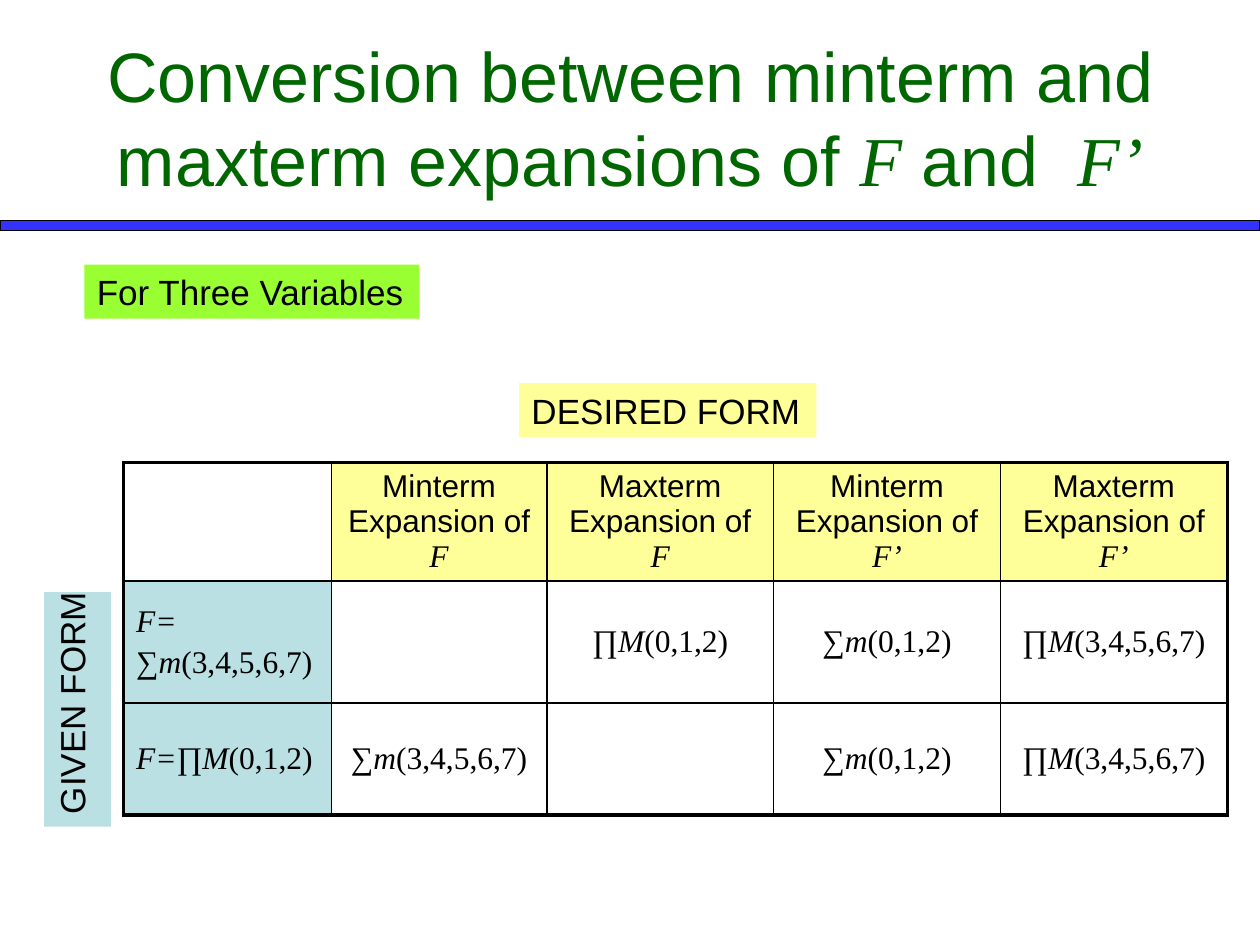
from typing import NamedTuple

from lxml.etree import SubElement
from pptx import Presentation
from pptx.dml.color import RGBColor
from pptx.enum.shapes import MSO_SHAPE
from pptx.enum.text import MSO_ANCHOR, MSO_AUTO_SIZE, PP_ALIGN
from pptx.oxml.ns import qn
from pptx.util import Inches, Pt

SANS, SERIF = "Arial", "Times New Roman"
BLACK, GREEN, BLUE = "000000", "006600", "3333FF"
YELLOW, TEAL, LIME = "FFFF99", "BBE0E3", "99FF33"
COLUMN_WIDTHS = (1.65, 1.71, 1.8, 1.8, 1.8)
ROW_HEIGHTS = (0.94, 0.97, 0.89)


class TextRun(NamedTuple):
    text: str
    font: str = SERIF
    italic: bool = False


class Label(NamedTuple):
    text: str
    left: float
    top: float
    width: float
    height: float
    fill: str
    upward: bool = False


LABELS = (
    Label("GIVEN FORM", 0.35, 4.7, 0.53, 1.86, TEAL, upward=True),
    Label("DESIRED FORM", 4.12, 3.04, 2.36, 0.43, YELLOW),
    Label("For Three Variables", 0.67, 2.1, 2.66, 0.43, LIME),
)


def color(hex_value: str) -> RGBColor:
    return RGBColor.from_string(hex_value)


def variable(name: str) -> TextRun:
    return TextRun(name, italic=True)


def heading(kind: str, function: str) -> list:
    return [[TextRun(f"{kind} Expansion of ", SANS), variable(function)]]


def expansion(operator: str, letter: str, indices: str) -> list:
    return [TextRun(operator), variable(letter), TextRun(f"({indices})")]


MINTERMS_F = expansion("∑", "m", "3,4,5,6,7")
MAXTERMS_F = expansion("∏", "M", "0,1,2")
MINTERMS_NOT_F = expansion("∑", "m", "0,1,2")
MAXTERMS_NOT_F = expansion("∏", "M", "3,4,5,6,7")

# Each cell is a list of paragraphs, each paragraph a list of runs.
TABLE_ROWS = (
    ([], heading("Minterm", "F"), heading("Maxterm", "F"),
     heading("Minterm", "F’"), heading("Maxterm", "F’")),
    ([[variable("F=")], MINTERMS_F], [], [MAXTERMS_F],
     [MINTERMS_NOT_F], [MAXTERMS_NOT_F]),
    ([[variable("F="), *MAXTERMS_F]], [MINTERMS_F], [],
     [MINTERMS_NOT_F], [MAXTERMS_NOT_F]),
)


def add_runs(paragraph, runs, size: float, text_color: str = BLACK) -> None:
    for text, font, italic in runs:
        run = paragraph.add_run()
        run.text = text
        formats = {"name": font, "size": Pt(size), "italic": italic}
        for attribute, value in formats.items():
            setattr(run.font, attribute, value)
        run.font.color.rgb = color(text_color)


def add_rectangle(slide, left: float, top: float, width: float, height: float, fill: str):
    shape = slide.shapes.add_shape(
        MSO_SHAPE.RECTANGLE, Inches(left), Inches(top), Inches(width), Inches(height))
    shape.shadow.inherit = False
    shape.fill.solid()
    shape.fill.fore_color.rgb = color(fill)
    shape.line.fill.background()
    return shape


def add_title(slide) -> None:
    title = slide.shapes.title
    box = {"left": 0.5, "top": 0.3, "width": 9, "height": 1.25}
    for attribute, value in box.items():
        setattr(title, attribute, Inches(value))
    frame = title.text_frame
    frame.auto_size = MSO_AUTO_SIZE.NONE
    frame.vertical_anchor = MSO_ANCHOR.MIDDLE
    paragraph = frame.paragraphs[0]
    paragraph.alignment = PP_ALIGN.CENTER
    runs = (TextRun("Conversion between minterm and maxterm expansions of ", SANS),
            variable("F"), TextRun(" and  ", SANS), variable("F’"))
    add_runs(paragraph, runs, 40, GREEN)


def add_rule(slide) -> None:
    rule = add_rectangle(slide, 0, 1.75, 10, 0.08, BLUE)
    rule.line.color.rgb = color(BLACK)
    rule.line.width = Pt(0.75)


def add_label(slide, label: Label) -> None:
    shape = add_rectangle(slide, *label[1:6])
    frame = shape.text_frame
    formats = {"word_wrap": False, "auto_size": MSO_AUTO_SIZE.SHAPE_TO_FIT_TEXT,
               "vertical_anchor": MSO_ANCHOR.TOP}
    for attribute, value in formats.items():
        setattr(frame, attribute, value)
    if label.upward:
        shape.rotation = 180
        frame._txBody.bodyPr.set("vert", "eaVert")
    paragraph = frame.paragraphs[0]
    paragraph.alignment = PP_ALIGN.LEFT
    add_runs(paragraph, [TextRun(label.text, SANS)], 20)


def add_borders(cell, row: int, column: int) -> None:
    """Draw thick lines on the outer edge of the table and thin ones inside."""
    outer_edges = {"a:lnL": column == 0, "a:lnR": column == len(COLUMN_WIDTHS) - 1,
                   "a:lnT": row == 0, "a:lnB": row == len(ROW_HEIGHTS) - 1}
    properties = cell._tc.get_or_add_tcPr()
    for tag, outer in outer_edges.items():
        line = SubElement(properties, qn(tag), w=str(Pt(2.25 if outer else 1)))
        fill = SubElement(line, qn("a:solidFill"))
        SubElement(fill, qn("a:srgbClr"), val=BLACK)


def fill_cell(cell, row: int, column: int, paragraphs: list) -> None:
    add_borders(cell, row, column)
    cell.vertical_anchor = MSO_ANCHOR.MIDDLE
    if (row == 0) != (column == 0):
        cell.fill.solid()
        cell.fill.fore_color.rgb = color(YELLOW if row == 0 else TEAL)
    else:
        cell.fill.background()
    frame = cell.text_frame
    for index, runs in enumerate(paragraphs):
        paragraph = frame.add_paragraph() if index else frame.paragraphs[0]
        paragraph.alignment = PP_ALIGN.CENTER if column else PP_ALIGN.LEFT
        paragraph.space_before = Pt(3.6)
        add_runs(paragraph, runs, 18)


def add_conversion_table(slide) -> None:
    table = slide.shapes.add_table(
        len(ROW_HEIGHTS), len(COLUMN_WIDTHS), Inches(0.98), Inches(3.67),
        Inches(sum(COLUMN_WIDTHS)), Inches(sum(ROW_HEIGHTS))).table
    table.first_row = table.horz_banding = False
    for column, width in zip(table.columns, COLUMN_WIDTHS):
        column.width = Inches(width)
    for row, height in zip(table.rows, ROW_HEIGHTS):
        row.height = Inches(height)
    for row, cells in enumerate(TABLE_ROWS):
        for column, paragraphs in enumerate(cells):
            fill_cell(table.cell(row, column), row, column, paragraphs)


def main() -> None:
    presentation = Presentation()
    presentation.slide_width, presentation.slide_height = Inches(10), Inches(7.5)
    slide = presentation.slides.add_slide(presentation.slide_layouts[5])
    add_rule(slide)
    add_title(slide)
    add_conversion_table(slide)
    for label in LABELS:
        add_label(slide, label)
    presentation.save("out.pptx")


if __name__ == "__main__":
    main()
